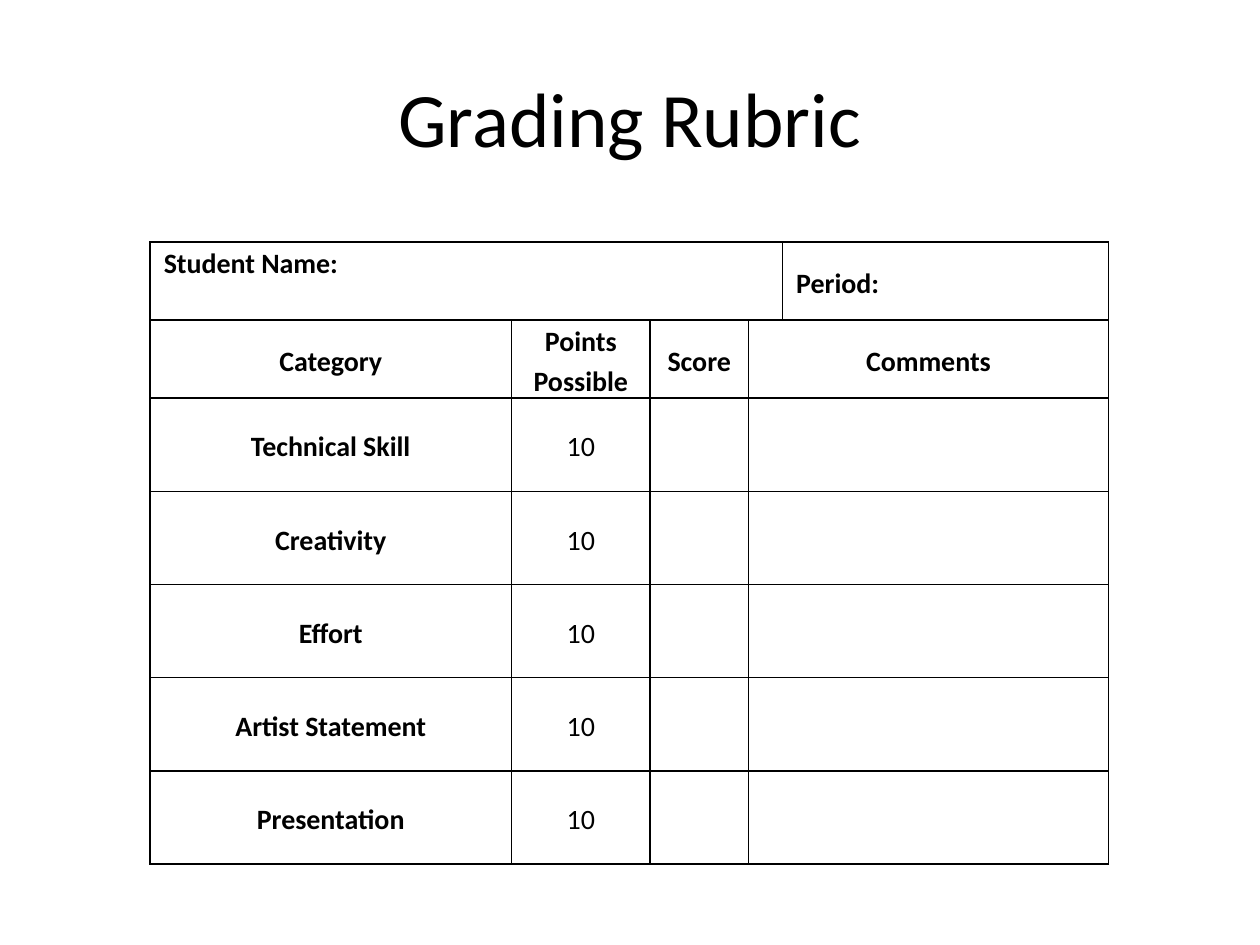
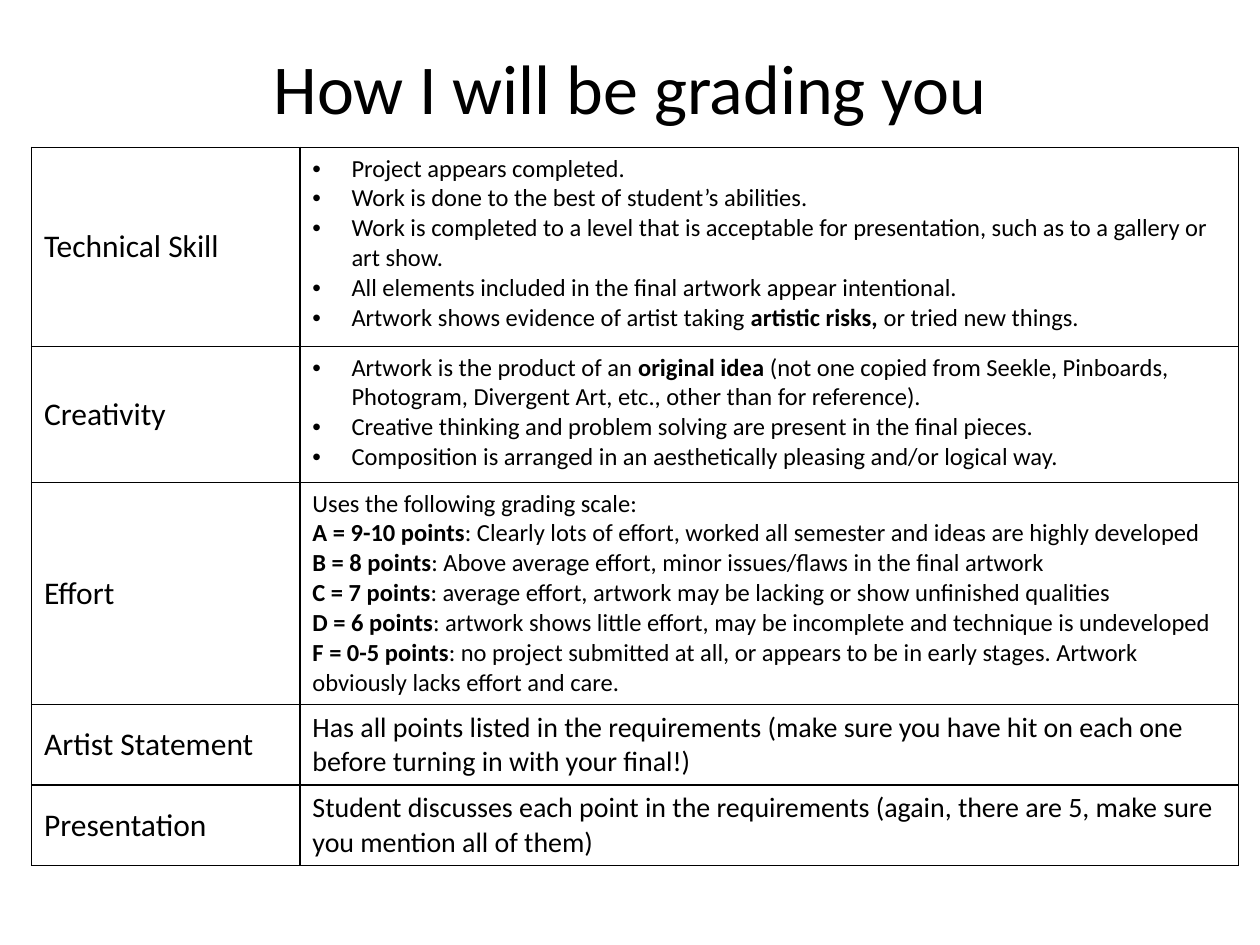
"""Build a two-slide art grading rubric with a score sheet and grading criteria."""
from lxml.etree import SubElement
from pptx import Presentation
from pptx.dml.color import RGBColor
from pptx.enum.text import MSO_ANCHOR, PP_ALIGN
from pptx.oxml.ns import qn
from pptx.util import Inches, Pt

FONT = "Calibri"
BLACK = "000000"
CATEGORIES = ["Technical Skill", "Creativity", "Effort", "Artist Statement", "Presentation"]


def write_paragraph(paragraph, text, size, bold=False, bullet=False):
    if bullet:
        properties = paragraph._p.get_or_add_pPr()
        properties.set("marL", str(Inches(0.31)))
        properties.set("indent", str(Inches(-0.31)))
        SubElement(properties, qn("a:buFont"), typeface="Arial")
        SubElement(properties, qn("a:buChar"), char="•")
    paragraph.font.name = FONT
    paragraph.font.size = Pt(size)
    paragraph.font.bold = bold
    paragraph.font.color.rgb = RGBColor.from_string(BLACK)
    for index, part in enumerate(text.split("**")):
        if part:
            run = paragraph.add_run()
            run.text = part
            if index % 2:
                run.font.bold = True


def add_titled_table(title, title_height, title_size, left, top, widths, heights):
    slide = presentation.slides.add_slide(presentation.slide_layouts[6])
    title_box = slide.shapes.add_textbox(Inches(0.5), Inches(0.3), Inches(9), Inches(title_height))
    title_box.text_frame.word_wrap = True
    title_box.text_frame.vertical_anchor = MSO_ANCHOR.MIDDLE
    title_paragraph = title_box.text_frame.paragraphs[0]
    title_paragraph.alignment = PP_ALIGN.CENTER
    write_paragraph(title_paragraph, title, title_size)

    table = slide.shapes.add_table(
        len(heights), len(widths), Inches(left), Inches(top),
        Inches(sum(widths)), Inches(sum(heights))).table
    table.first_row = False
    table.horz_banding = False
    for column, width in zip(table.columns, widths):
        column.width = Inches(width)
    for row, height in zip(table.rows, heights):
        row.height = Inches(height)
        for cell in row.cells:
            cell.vertical_anchor = MSO_ANCHOR.MIDDLE
            cell_properties = cell._tc.get_or_add_tcPr()
            for side in ("a:lnL", "a:lnR", "a:lnT", "a:lnB"):
                line = SubElement(cell_properties, qn(side), w=str(Pt(1)))
                line_fill = SubElement(line, qn("a:solidFill"))
                SubElement(line_fill, qn("a:srgbClr"), val=BLACK)
            cell.fill.background()
    return table


presentation = Presentation()
presentation.slide_width = Inches(10)
presentation.slide_height = Inches(7.5)

score_sheet = add_titled_table(
    "Grading Rubric", 1.25, 44, 1.19, 1.92,
    [2.87, 1.1, 0.78, 0.27, 2.59], [0.62] * 2 + [0.74] * len(CATEGORIES))
score_sheet.cell(0, 0).merge(score_sheet.cell(0, 3))
for row in range(1, len(score_sheet.rows)):
    score_sheet.cell(row, 3).merge(score_sheet.cell(row, 4))

score_rows = [
    {0: "Student Name:", 4: "Period:"},
    dict(enumerate(["Category", "Points Possible", "Score", "Comments"])),
]
score_rows += [{0: category, 1: "10"} for category in CATEGORIES]
for row, entries in enumerate(score_rows):
    for column, text in entries.items():
        cell = score_sheet.cell(row, column)
        cell.margin_left = cell.margin_right = Inches(0.11)
        cell.margin_top = cell.margin_bottom = 0
        paragraph = cell.text_frame.paragraphs[0]
        paragraph.alignment = PP_ALIGN.CENTER if row else PP_ALIGN.LEFT
        paragraph.line_spacing = 1.15
        write_paragraph(paragraph, text, 16, bold=text != "10")
score_sheet.cell(0, 0).vertical_anchor = MSO_ANCHOR.TOP

criteria = [
    (14, True, [
        "Project appears completed.",
        "Work is done to the best of student’s abilities.",
        "Work is completed to a level that is acceptable for presentation, such as to a gallery or art show.",
        "All elements included in the final artwork appear intentional.",
        "Artwork shows evidence of artist taking **artistic risks, **or tried new things.",
    ]),
    (14, True, [
        "Artwork is the product of an **original idea** (not one copied from Seekle, Pinboards, "
        "Photogram, Divergent Art, etc., other than for reference).",
        "Creative thinking and problem solving are present in the final pieces.",
        "Composition is arranged in an aesthetically pleasing and/or logical way.",
    ]),
    (14, False, [
        "Uses the following grading scale:",
        "**A = 9-10 points**: Clearly lots of effort, worked all semester and ideas are highly developed",
        "**B = 8 points**: Above average effort, minor issues/flaws in the final artwork",
        "**C = 7 points**: average effort, artwork may be lacking or show unfinished qualities",
        "**D = 6 points**: artwork shows little effort, may be incomplete and technique is undeveloped",
        "**F = 0-5 points**: no project submitted at all, or appears to be in early stages. "
        "Artwork obviously lacks effort and care.",
    ]),
    (16, False, [
        "Has all points listed in the requirements (make sure you have hit on each one "
        "before turning in with your final!)",
    ]),
    (16, False, [
        "Student discusses each point in the requirements (again, there are 5, make sure "
        "you mention all of them)",
    ]),
]
criteria_table = add_titled_table(
    "How I will be grading you", 0.78, 40, 0.25, 1.17,
    [2.13, 7.45], [1.58, 1.08, 1.76, 0.64, 0.64])
for row, (category, (size, bullet, lines)) in enumerate(zip(CATEGORIES, criteria)):
    write_paragraph(criteria_table.cell(row, 0).text_frame.paragraphs[0], category, 18)
    cell = criteria_table.cell(row, 1)
    cell.vertical_anchor = MSO_ANCHOR.TOP
    for index, text in enumerate(lines):
        frame = cell.text_frame
        paragraph = frame.add_paragraph() if index else frame.paragraphs[0]
        write_paragraph(paragraph, text, size, bullet=bullet)

presentation.save("out.pptx")
